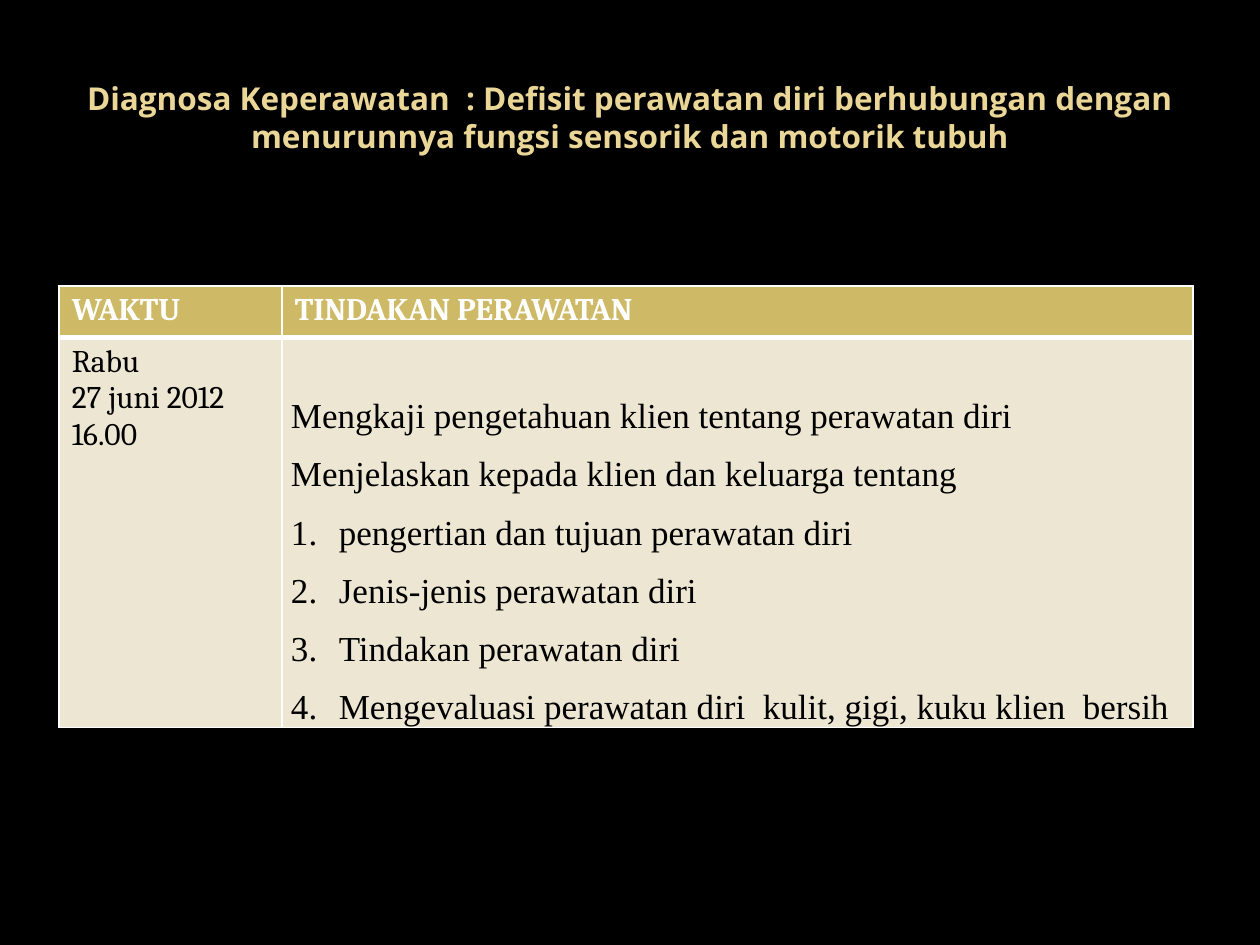
from lxml import etree
from pptx import Presentation
from pptx.dml.color import RGBColor
from pptx.enum.text import MSO_ANCHOR, PP_ALIGN
from pptx.oxml.ns import qn
from pptx.util import Inches, Pt

CENTER, JUSTIFY = PP_ALIGN.CENTER, PP_ALIGN.JUSTIFY
MIDDLE = MSO_ANCHOR.MIDDLE
COLORS = {
    "background": "000000",
    "title": "EAD696",
    "header": "CEB966",
    "body": "EDE6D3",
    "white": "FFFFFF",
    "black": "000000",
}


def add_text(para, text, font, size, color, bold=False):
    span = para.add_run()
    span.text = text
    span.font.name = font
    span.font.size = Pt(size)
    span.font.bold = bold
    span.font.color.rgb = RGBColor.from_string(COLORS[color])


def style_cell(cell, fill, bottom_width):
    cell.fill.solid()
    cell.fill.fore_color.rgb = RGBColor.from_string(COLORS[fill])
    properties = cell._tc.get_or_add_tcPr()
    widths = {"a:lnL": 1, "a:lnR": 1, "a:lnT": 1, "a:lnB": bottom_width}
    for position, (side, width) in enumerate(widths.items()):
        line = etree.Element(qn(side), w=str(Pt(width)))
        solid = etree.SubElement(line, qn("a:solidFill"))
        etree.SubElement(solid, qn("a:srgbClr"), val=COLORS["white"])
        properties.insert(position, line)


deck = Presentation()
deck.slide_width, deck.slide_height = Inches(10), Inches(7.5)
page = deck.slides.add_slide(deck.slide_layouts[5])
page.background.fill.solid()
page.background.fill.fore_color.rgb = RGBColor.from_string(COLORS["background"])

title = page.shapes.title
title.left, title.top = Inches(0.5), Inches(0.3)
title.width, title.height = Inches(9), Inches(1.25)
title.text_frame.vertical_anchor = MIDDLE
title.text_frame.word_wrap = True
para = title.text_frame.paragraphs[0]
para.alignment = CENTER
add_text(
    para,
    "Diagnosa Keperawatan  : Defisit perawatan diri berhubungan dengan "
    "menurunnya fungsi sensorik dan motorik tubuh",
    "Open Sans", 18, "title", True,
)

table = page.shapes.add_table(
    2, 2, Inches(0.47), Inches(2.27), Inches(9), Inches(3.35)
).table
table.columns[0].width, table.columns[1].width = Inches(1.77), Inches(7.23)
table.rows[0].height, table.rows[1].height = Inches(0.41), Inches(2.94)

for column, heading in enumerate(["WAKTU", "TINDAKAN PERAWATAN"]):
    cell = table.cell(0, column)
    style_cell(cell, "header", 3)
    add_text(cell.text_frame.paragraphs[0], heading, "Cambria", 18, "white", True)

time_cell = table.cell(1, 0)
style_cell(time_cell, "body", 1)
for index, text in enumerate(["Rabu", "27 juni 2012", "16.00"]):
    frame = time_cell.text_frame
    para = frame.add_paragraph() if index else frame.paragraphs[0]
    add_text(para, text, "Cambria", 18, "black")

actions = [
    ("Mengkaji pengetahuan klien tentang perawatan diri", False),
    ("Menjelaskan kepada klien dan keluarga tentang ", False),
    ("pengertian dan tujuan perawatan diri", True),
    ("Jenis-jenis perawatan diri", True),
    ("Tindakan perawatan diri", True),
    ("Mengevaluasi perawatan diri  kulit, gigi, kuku klien  bersih", True),
]
action_cell = table.cell(1, 1)
style_cell(action_cell, "body", 1)
action_cell.margin_left = action_cell.margin_right = Inches(0.07)
action_cell.margin_top, action_cell.margin_bottom = Inches(0.32), Inches(0)
for index, (text, numbered) in enumerate(actions):
    frame = action_cell.text_frame
    para = frame.add_paragraph() if index else frame.paragraphs[0]
    para.alignment = JUSTIFY
    para.line_spacing = 1.5
    if numbered:
        properties = para._p.get_or_add_pPr()
        properties.set("marL", str(Inches(0.38)))
        properties.set("indent", str(-Inches(0.38)))
        etree.SubElement(properties, qn("a:buFont"), typeface="+mj-lt")
        etree.SubElement(properties, qn("a:buAutoNum"), type="arabicPeriod")
    add_text(para, text, "Times New Roman", 20, "black")

deck.save("out.pptx")
